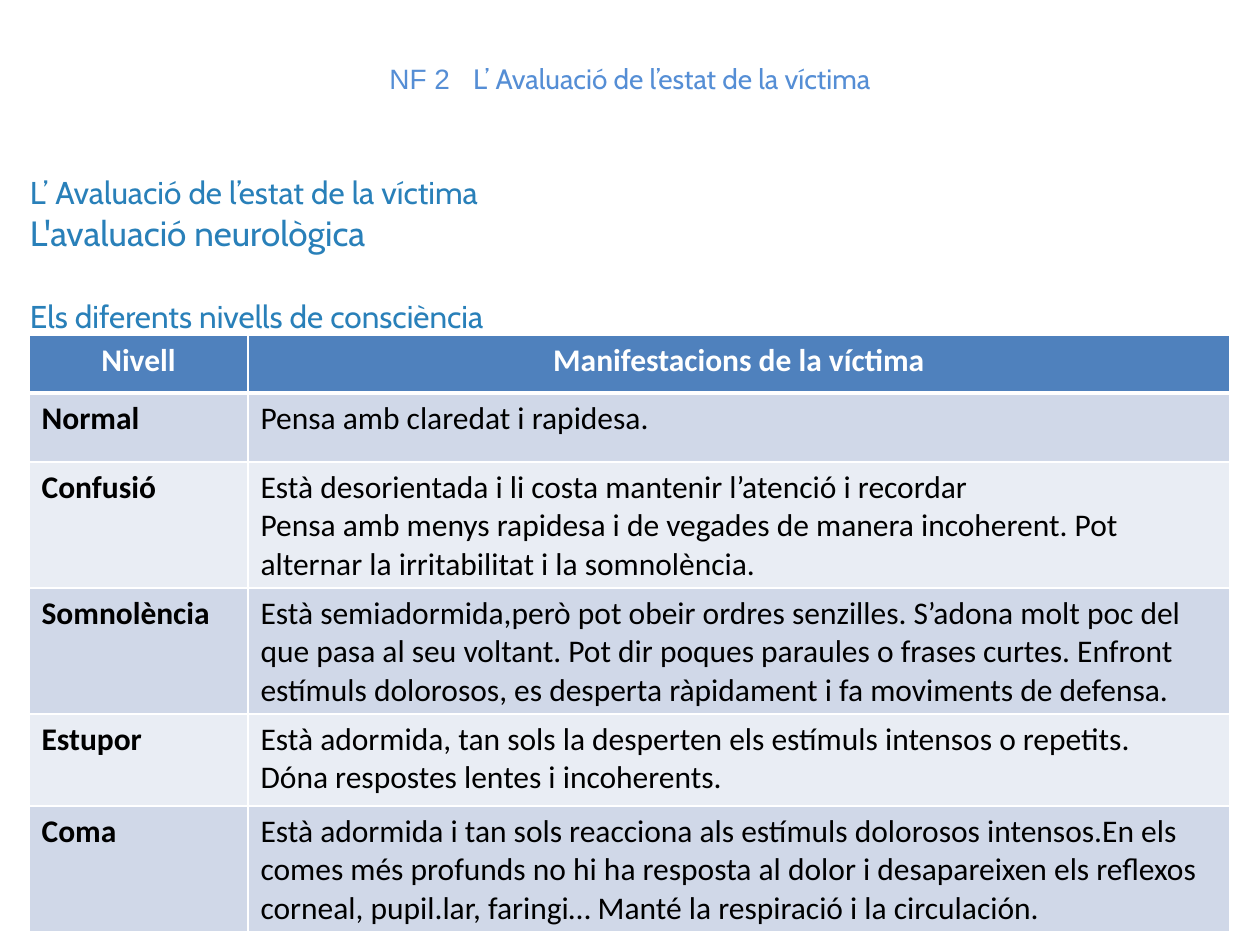
"""Build the slide on levels of consciousness: title, headings and table."""
import pptx
import pptx.util
import pptx.oxml
import pptx.oxml.ns
import lxml.etree
from pptx.dml.color import RGBColor
from pptx.enum.text import MSO_ANCHOR, PP_ALIGN

PX = 914400 // 126
TITLE_BLUE = RGBColor(0x55, 0x8E, 0xD5)
HEADING_BLUE = RGBColor(0x29, 0x80, 0xB9)
HEADER_FILL = RGBColor(0x4F, 0x81, 0xBD)
BAND_FILLS = [RGBColor(0xD0, 0xD8, 0xE8), RGBColor(0xE9, 0xED, 0xF4)]
WHITE = RGBColor(0xFF, 0xFF, 0xFF)
BLACK = RGBColor(0, 0, 0)

TOPIC = "L’ Avaluació de l’estat de la víctima"
HEADINGS = [
    (TOPIC, 18, 0),
    ("L'avaluació neurològica", 20, 0),
    ("Els diferents nivells de consciència", 18, 24.6),
]
COLUMNS = [219, 982]
ROWS = [
    (58, "Nivell", "Manifestacions de la víctima"),
    (69, "Normal", "Pensa amb claredat i rapidesa."),
    (92, "Confusió",
     "Està desorientada i li costa mantenir l’atenció i recordar\n"
     "Pensa amb menys rapidesa i de vegades de manera incoherent. "
     "Pot alternar la irritabilitat i la somnolència."),
    (92, "Somnolència",
     "Està semiadormida,però pot obeir ordres senzilles. S’adona molt poc del "
     "que pasa al seu voltant. Pot dir poques paraules o frases curtes. Enfront "
     "estímuls dolorosos, es desperta ràpidament i fa moviments de defensa."),
    (92, "Estupor",
     "Està adormida, tan sols la desperten els estímuls intensos o repetits.\n"
     "Dóna respostes lentes i incoherents."),
    (92, "Coma",
     "Està adormida i tan sols reacciona als estímuls dolorosos intensos.En els "
     "comes més profunds no hi ha resposta al dolor i desapareixen els reflexos "
     "corneal, pupil.lar, faringi… Manté la respiració i la circulación."),
]


def px(*lengths):
    return [length * PX for length in lengths]


def set_font(font, name, size, color, bold=False):
    font.name = name
    font.size = pptx.util.Pt(size)
    font.color.rgb = color
    font.bold = bold


def add_text_box(s, *box):
    tf = s.shapes.add_textbox(*px(*box)).text_frame
    tf.word_wrap = True
    tf.margin_left = tf.margin_right = tf.margin_top = tf.margin_bottom = 0
    return tf


def add_title(s):
    tf = add_text_box(s, 63, 38, 1134, 81)
    tf.vertical_anchor = MSO_ANCHOR.MIDDLE
    p = tf.paragraphs[0]
    p.alignment = PP_ALIGN.CENTER
    for text, name in (("NF 2", "Arial"), (" ", "Arial"), (TOPIC, "Cabin")):
        r = p.add_run()
        r.text = text
        set_font(r.font, name, 16, TITLE_BLUE)
        if text == " ":
            r._r.get_or_add_rPr().set("spc", "890")


def add_headings(s):
    tf = add_text_box(s, 30, 173, 1200, 163)
    for i, (text, size, gap) in enumerate(HEADINGS):
        p = tf.add_paragraph() if i else tf.paragraphs[0]
        p.text = text
        p.line_spacing = 1.01
        p.space_before = pptx.util.Pt(gap)
        set_font(p.font, "Cabin", size, HEADING_BLUE)


def set_borders(cell, top, bottom):
    tc_pr = cell._tc.get_or_add_tcPr()
    for side, width in (("L", 1), ("R", 1), ("T", top), ("B", bottom)):
        ln = lxml.etree.SubElement(tc_pr, pptx.oxml.ns.qn(f"a:ln{side}"),
                                   w=str(pptx.util.Pt(width)))
        fill = lxml.etree.SubElement(ln, pptx.oxml.ns.qn("a:solidFill"))
        lxml.etree.SubElement(fill, pptx.oxml.ns.qn("a:srgbClr"), val=str(WHITE))


def fill_cell(cell, text, row, col):
    header = row == 0
    set_borders(cell, 3 if row == 1 else 1, 3 if header else 1)
    cell.fill.solid()
    cell.fill.fore_color.rgb = HEADER_FILL if header else BAND_FILLS[(row - 1) % 2]
    cell.text = text
    for p in cell.text_frame.paragraphs:
        p.alignment = PP_ALIGN.CENTER if header else PP_ALIGN.LEFT
        set_font(p.font, "Calibri", 18, WHITE if header else BLACK,
                 header or col == 0)


def add_levels_table(s):
    height = sum(row[0] for row in ROWS)
    table = s.shapes.add_table(len(ROWS), len(COLUMNS),
                               *px(29, 335, sum(COLUMNS), height)).table
    for column, width in zip(table.columns, COLUMNS):
        column.width = width * PX
    for i, (row_height, *texts) in enumerate(ROWS):
        table.rows[i].height = row_height * PX
        for j, text in enumerate(texts):
            fill_cell(table.cell(i, j), text, i, j)


def main():
    prs = pptx.Presentation()
    prs.slide_width, prs.slide_height = px(1260, 945)
    s = prs.slides.add_slide(prs.slide_layouts[6])
    add_title(s)
    add_headings(s)
    add_levels_table(s)
    prs.save("out.pptx")


if __name__ == "__main__":
    main()
